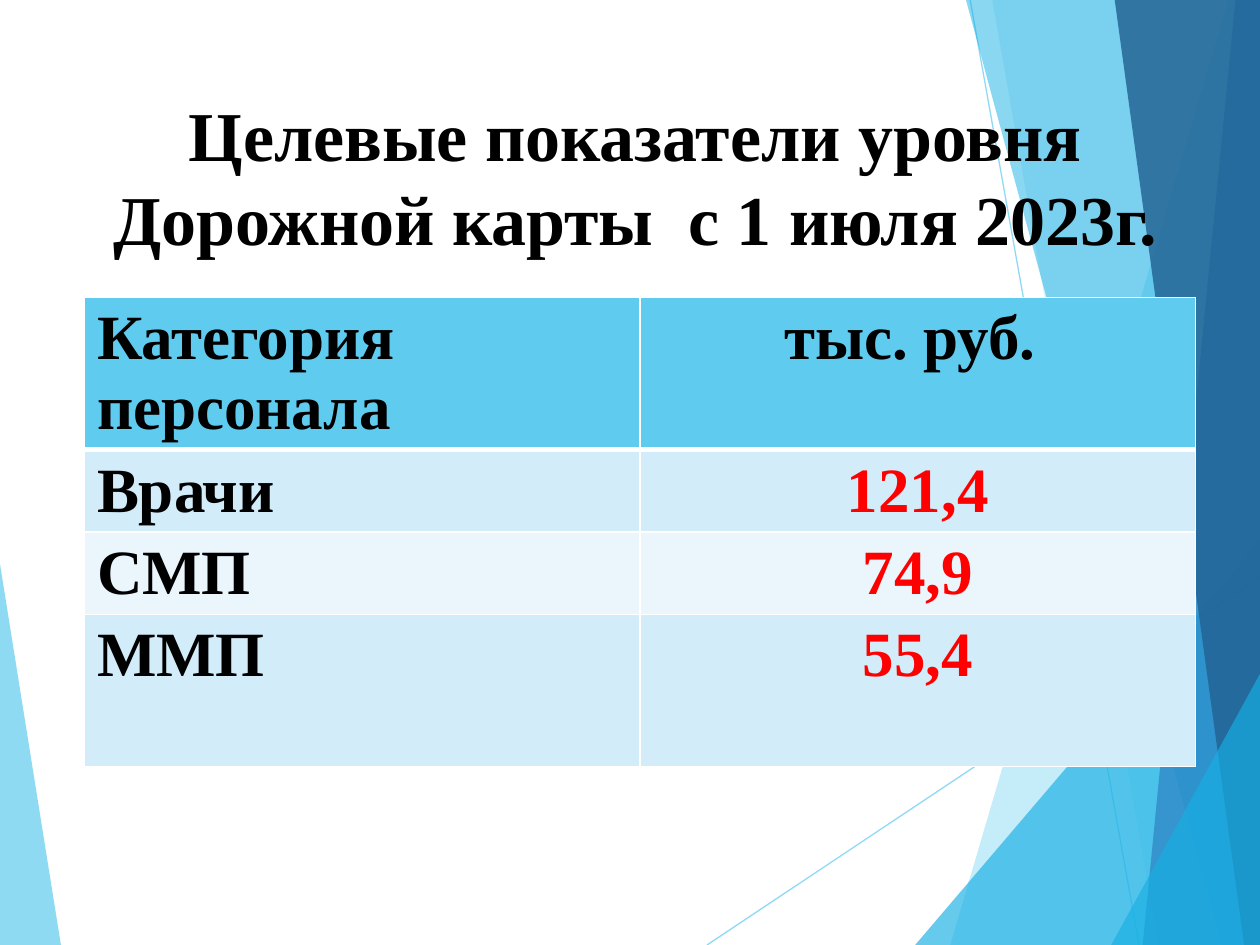
from pptx import Presentation
from pptx.util import Pt
from pptx.dml.color import RGBColor
from pptx.enum.shapes import MSO_CONNECTOR
from pptx.enum.text import PP_ALIGN, MSO_ANCHOR, MSO_AUTO_SIZE
from pptx.oxml.ns import qn
from lxml.etree import SubElement

# Content
TITLE = "Целевые показатели уровня\vДорожной карты  с 1 июля 2023г."
ROWS = [
    ("Категория персонала", "тыс. руб. "),
    ("Врачи", "121,4"),
    ("СМП", "74,9"),
    ("ММП", "55,4"),
]
HIGHS = [87, 47, 47, 87]
FONT = "Times New Roman"
COLORS = {
    "sky": "5FCBEF", "cyan": "17B0E4", "blue": "2E83C3", "navy": "226292",
    "odd": "D2ECF9", "even": "EAF6FC", "white": "FFFFFF",
    "black": "000000", "red": "FF0000",
}
WIDE, HIGH = 720, 540

# Decoration: lines, then panels that run to the right edge
LINES = [((404, 540), (720.7, 329)), ((554.4, 0), (650.9, 540))]
WEDGE = [(-0.7, 316), (35.3, 540.7), (-0.7, 540)]
PANELS = [  # top x, top y, bottom x, colour, opacity in percent
    (702, 0, 542.9, "sky", 36),
    (567.4, 0, 661.7, "sky", 20),
    (WIDE, 308.9, 522.7, "cyan", 66),
    (552.2, 0, 698.4, "cyan", 50),
    (706.3, 0, 653, "blue", 70),
    (637.2, 0, 711.4, "navy", 82),
    (WIDE, 385.2, 635, "cyan", 66),
]


def paint(fill, name, alpha=None):
    fill.solid()
    fill.fore_color.rgb = RGBColor.from_string(COLORS[name])
    if alpha:
        tone = fill._xPr.find(".//" + qn("a:srgbClr"))
        SubElement(tone, qn("a:alpha"), val=str(alpha * 1000))


def style(para, size, name, align):
    para.alignment = align
    for run in para.runs:
        font = run.font
        font.name, font.size, font.bold = FONT, Pt(size), True
        font.color.rgb = RGBColor.from_string(COLORS[name])


def draw_area(shapes, points, name, alpha):
    pen = shapes.build_freeform(*points[0], scale=Pt(1))
    pen.add_line_segments(points[1:], close=True)
    area = pen.convert_to_shape()
    area.shadow.inherit = False
    area.line.fill.background()
    paint(area.fill, name, alpha)


def draw_line(shapes, start, end):
    line = shapes.add_connector(
        MSO_CONNECTOR.STRAIGHT, *(Pt(v) for v in start + end))
    line.line.width = Pt(0.75)
    paint(line.line.fill, "sky", 70)
    SubElement(line._element.spPr, qn("a:effectLst"))


def edge(cell, low):
    props = cell._tc.get_or_add_tcPr()
    widths = {"a:lnL": 1, "a:lnR": 1, "a:lnT": 1, "a:lnB": low}
    for i, (tag, width) in enumerate(widths.items()):
        side = SubElement(props, qn(tag), w=str(Pt(width)))
        props.insert(i, side)
        fill = SubElement(side, qn("a:solidFill"))
        SubElement(fill, qn("a:srgbClr"), val=COLORS["white"])


def main():
    deck = Presentation()
    deck.slide_width, deck.slide_height = Pt(WIDE), Pt(HIGH)
    slide = deck.slides.add_slide(deck.slide_layouts[5])
    shapes = slide.shapes

    # Background
    draw_area(shapes, WEDGE, "sky", 70)
    for start, end in LINES:
        draw_line(shapes, start, end)
    for top_x, top, low_x, name, alpha in PANELS:
        points = [(top_x, top), (low_x, HIGH), (WIDE, HIGH)]
        if top_x < WIDE:
            points.append((WIDE, top))
        draw_area(shapes, points, name, alpha)

    # Title, in front of the panels
    title = shapes.title
    shapes._spTree.append(title._element)
    title.left, title.top = Pt(48.25), Pt(48.25)
    title.width, title.height = Pt(629.3), Pt(103.7)
    frame = title.text_frame
    frame.text = TITLE
    frame.word_wrap = True
    frame.auto_size = MSO_AUTO_SIZE.NONE
    frame.vertical_anchor = MSO_ANCHOR.BOTTOM
    head = frame.paragraphs[0]
    head.line_spacing = Pt(48)
    style(head, 40, "black", PP_ALIGN.CENTER)

    # Table
    table = shapes.add_table(
        len(ROWS), 2, Pt(48.25), Pt(170), Pt(635), Pt(sum(HIGHS))).table
    for r, texts in enumerate(ROWS):
        table.rows[r].height = Pt(HIGHS[r])
        back = "sky" if r == 0 else "odd" if r % 2 else "even"
        for c, text in enumerate(texts):
            cell = table.cell(r, c)
            cell.text_frame.text = text
            style(cell.text_frame.paragraphs[0], 36,
                  "red" if r and c else "black",
                  PP_ALIGN.CENTER if c else PP_ALIGN.LEFT)
            paint(cell.fill, back)
            edge(cell, 1 if r else 3)

    deck.save("out.pptx")


if __name__ == "__main__":
    main()
